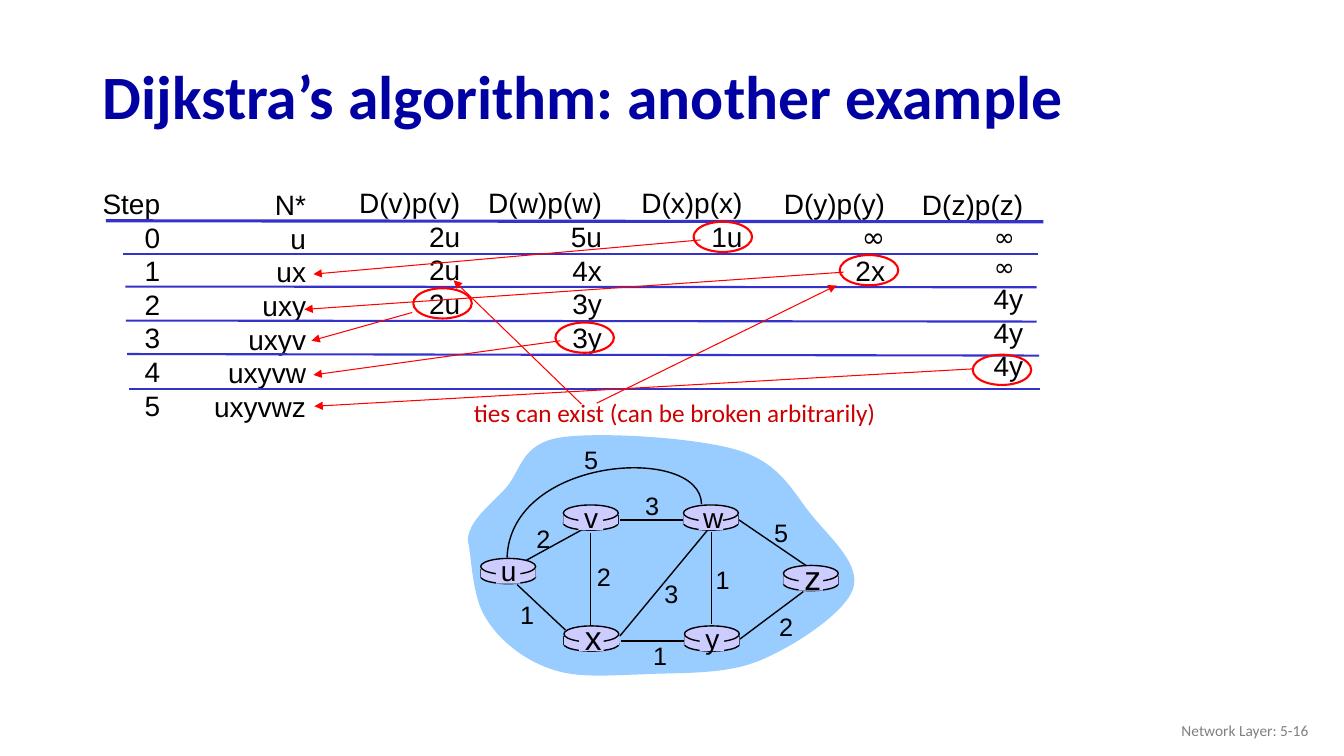
from pptx import Presentation
from pptx.dml.color import RGBColor
from pptx.enum.shapes import MSO_CONNECTOR, MSO_SHAPE
from pptx.enum.text import MSO_ANCHOR, MSO_AUTO_SIZE, PP_ALIGN
from pptx.oxml.ns import qn
from pptx.util import Pt
from lxml.etree import SubElement

NAVY = RGBColor(0x00, 0x00, 0xA3)
GRAY = RGBColor(0x80, 0x80, 0x80)
BLACK = RGBColor(0x00, 0x00, 0x00)
RULE_BLUE = RGBColor(0x33, 0x33, 0xCC)
CLOUD_BLUE = RGBColor(0x99, 0xCC, 0xFF)
LILAC = RGBColor(0xCC, 0xCC, 0xFF)
RED = RGBColor(0xFF, 0x00, 0x00)
NOTE_RED = RGBColor(0xCC, 0x00, 0x00)

TITLE = "Dijkstra’s algorithm: another example"
FOOTER = "Network Layer: 5-16"
NOTE = "ties can exist (can be broken arbitrarily)"

COLUMNS = [
    (66.2, 129.6, 55.4, ["Step", "0", "1", "2", "3", "4", "5"]),
    (145.8, 130.5, 79.9, ["N*", "u", "ux", "uxy", "uxyv", "uxyvw", "uxyvwz"]),
    (248.8, 128.9, 87.1, ["D(v)p(v)", "2u", "2u", "2u"]),
    (340.6, 129.3, 96.5, ["D(w)p(w)", "5u", "4x", "3y", "3y"]),
    (450.4, 128.9, 87.1, ["D(x)p(x)", "1u"]),
    (552.2, 129.6, 87.1, ["D(y)p(y)", "∞", "2x"]),
    (650.9, 130.5, 87.1, ["D(z)p(z)", "∞ ", "∞ ", "4y", "4y", "4y"]),
]
RULES = [
    (75.6, 157.7, 745.2, 158.4),
    (87.8, 181.4, 741.6, 181.4),
    (89.5, 204.7, 740.4, 205.2),
    (90, 229, 740.4, 229.7),
    (90.9, 252.9, 742.3, 254),
    (92.2, 277.9, 743, 277.9),
]
PICK_ARROWS = [
    (500.4, 171.4, 223.9, 195.8),
    (602.6, 194.4, 217.4, 221),
    (294.5, 223.2, 222.5, 243.4),
    (400.3, 243.4, 223.9, 267.8),
    (694.8, 263.5, 224.6, 290.2),
]
TIE_ARROWS = [(415.4, 288.7, 324, 200.2), (426.2, 288, 597.6, 203.8)]
PICK_RINGS = [(495.4, 158.4), (295.2, 205.9), (599.8, 182.2), (396.7, 230.4), (694.8, 253.4)]

CLOUD_BOX = (334.1, 308.2, 281.5, 176.4)
CLOUD_START = (334.1, 385.9)
CLOUD_CURVES = [
    ((334.8, 371.5), (350.6, 360.7), (361.4, 348.5)),
    ((372.2, 336.2), (372.2, 316.8), (400.3, 312.5)),
    ((427.7, 308.2), (498.2, 312.5), (527.8, 321.8)),
    ((558, 331.2), (566.6, 352.1), (580.3, 368.6)),
    ((594, 385.2), (615.6, 403.9), (609.1, 421.2)),
    ((602.6, 438.5), (566.6, 462.2), (541.4, 472.3)),
    ((516.2, 482.4), (483.1, 480.2), (458.6, 481.7)),
    ((433.4, 482.4), (411.1, 484.6), (392.4, 477.4)),
    ((373.7, 470.9), (356.4, 457.2), (347, 441.4)),
    ((337, 426.2), (337, 397.4), CLOUD_START),
]
ARC_BOX = (362.2, 317.5, 138.9, 80.7)
ARC_START = (501.1, 360)
ARC_CURVES = [((500.4, 317.5), (365, 325.4), (362.2, 398.2))]

ROUTERS = [
    ("u", 343.4, 398.9, 20), ("x", 402.8, 447.1, 24), ("v", 402.4, 360.7, 20),
    ("w", 488.2, 360.7, 20), ("y", 488.9, 447.1, 20), ("z", 559.6, 403.9, 24),
]
EDGES = [
    (375.8, 400.3, 419, 376.6),
    (421.9, 380.9, 421.9, 447.8),
    (403.9, 450, 369.4, 417.6),
    (442.8, 454.3, 505.4, 378.7),
    (488.9, 457.9, 443.5, 457.9),
    (508.3, 380.2, 508.3, 445.7),
    (528.5, 456.5, 573.8, 422.6),
    (576.7, 404.6, 527, 370.8),
    (488.2, 371.5, 442.8, 371.5),
]
COSTS = [
    ("2", 388.1, 384.5), ("2", 431.3, 411.8), ("1", 376.6, 438.8), ("3", 479.5, 423.7),
    ("1", 471.6, 468), ("1", 516.2, 414), ("2", 561.6, 447.5), ("5", 558, 380.2),
    ("3", 465.8, 361.4), ("5", 422.2, 328.3),
]
ROUTER_WIDTH = 39.2

presentation = Presentation()
presentation.slide_width, presentation.slide_height = Pt(960), Pt(540)
slide = presentation.slides.add_slide(presentation.slide_layouts[6])
shapes = slide.shapes


def add_text(lines, left, top, width, height, size, color=BLACK, font="Arial",
             align=PP_ALIGN.LEFT, anchor=MSO_ANCHOR.TOP, wrap=False, bold=False, spacing=None):
    frame = shapes.add_textbox(Pt(left), Pt(top), Pt(width), Pt(height)).text_frame
    frame.word_wrap = wrap
    frame.auto_size = MSO_AUTO_SIZE.NONE if wrap else MSO_AUTO_SIZE.SHAPE_TO_FIT_TEXT
    frame.vertical_anchor = anchor
    frame.text = "\n".join(lines)
    for paragraph in frame.paragraphs:
        paragraph.alignment = align
        paragraph.line_spacing = spacing
        paragraph.font.size = Pt(size)
        paragraph.font.name = font
        paragraph.font.bold = bold
        paragraph.font.color.rgb = color
    return frame


def add_centered(text, center_x, center_y, size):
    width, height = 26, size * 1.2 + 7.2
    add_text([text], center_x - width / 2, center_y - height / 2, width, height, size,
             align=PP_ALIGN.CENTER)


def add_line(ends, color, weight, arrow=False):
    line = shapes.add_connector(MSO_CONNECTOR.STRAIGHT, *[Pt(value) for value in ends])
    line.line.color.rgb = color
    line.line.width = Pt(weight)
    if arrow:
        SubElement(line.line._get_or_add_ln(), qn("a:tailEnd"), type="triangle")
    SubElement(line._element.spPr, qn("a:effectLst"))


def paint(shape, fill=None, line=None, weight=1):
    shape.shadow.inherit = False
    if fill is None:
        shape.fill.background()
    else:
        shape.fill.solid()
        shape.fill.fore_color.rgb = fill
    if line is None:
        shape.line.fill.background()
    else:
        shape.line.color.rgb = line
        shape.line.width = Pt(weight)


def add_preset(kind, left, top, width, height, **colors):
    paint(shapes.add_shape(kind, Pt(left), Pt(top), Pt(width), Pt(height)), **colors)


def add_curve(box, start, curves, close, **colors):
    left, top, width, height = box
    builder = shapes.build_freeform(Pt(left), Pt(top))
    builder.add_line_segments([(Pt(left + width), Pt(top + height))], close=False)
    shape = builder.convert_to_shape()
    outline = shape._element.spPr.find(".//" + qn("a:path"))
    for segment in list(outline):
        outline.remove(segment)
    for tag, points in [("a:moveTo", [start])] + [("a:cubicBezTo", curve) for curve in curves]:
        segment = SubElement(outline, qn(tag))
        for x, y in points:
            SubElement(segment, qn("a:pt"), x=str(int(Pt(x - left))), y=str(int(Pt(y - top))))
    if close:
        SubElement(outline, qn("a:close"))
    paint(shape, **colors)


def add_router(name, left, top, size):
    add_preset(MSO_SHAPE.OVAL, left, top + 8, ROUTER_WIDTH, 10, fill=LILAC, line=BLACK)
    for side in (left, left + ROUTER_WIDTH):
        add_line((side, top + 7.2, side, top + 13.5), BLACK, 1)
    add_preset(MSO_SHAPE.RECTANGLE, left, top + 7.2, ROUTER_WIDTH, 6.3, fill=LILAC)
    add_preset(MSO_SHAPE.OVAL, left, top, ROUTER_WIDTH, 11.5, fill=LILAC, line=BLACK)
    add_preset(MSO_SHAPE.RECTANGLE, left + 10.8, top + 1.4, 17.6, 16.6, fill=LILAC)
    nudge = 1.2 if size == 24 else 0.3
    add_centered(name, left + ROUTER_WIDTH / 2 + nudge, top + 8.8 - nudge / 2, size)


add_text([TITLE], 66.2, 35.7, 828, 70.6, 44, NAVY, "Calibri",
         anchor=MSO_ANCHOR.MIDDLE, wrap=True, bold=True, spacing=0.9)
add_text([FOOTER], 725.8, 507.6, 216, 28.8, 11, GRAY, "Calibri",
         PP_ALIGN.RIGHT, MSO_ANCHOR.MIDDLE, wrap=True)

for left, top, width, cells in COLUMNS:
    column = add_text(cells, left, top, width, 24 * len(cells) + 7.2, 20, align=PP_ALIGN.RIGHT)
    for paragraph in column.paragraphs:
        if "∞" in paragraph.text:
            paragraph.font.name = "Comic Neue"
            paragraph.font.size = Pt(18 if paragraph.text.endswith(" ") else 20)
for index, ends in enumerate(RULES):
    add_line(ends, RULE_BLUE, 1.5 if index else 2.25)

add_curve(CLOUD_BOX, CLOUD_START, CLOUD_CURVES, True, fill=CLOUD_BLUE)
for ends in EDGES:
    add_line(ends, BLACK, 1)
add_curve(ARC_BOX, ARC_START, ARC_CURVES, False, line=BLACK)
for router in ROUTERS:
    add_router(*router)
for cost, center_x, center_y in COSTS:
    add_centered(cost, center_x, center_y, 18)

for ends in PICK_ARROWS + TIE_ARROWS:
    add_line(ends, RED, 0.75, arrow=True)
for left, top in PICK_RINGS:
    add_preset(MSO_SHAPE.OVAL, left, top, 41.8, 21.6, line=RED, weight=1.5)
note = add_text([NOTE], 331.4, 283.9, 312.5, 25.9, 18, NOTE_RED, "Calibri", spacing=0.85)
note.paragraphs[0].space_before = Pt(3.6)

presentation.save("out.pptx")
